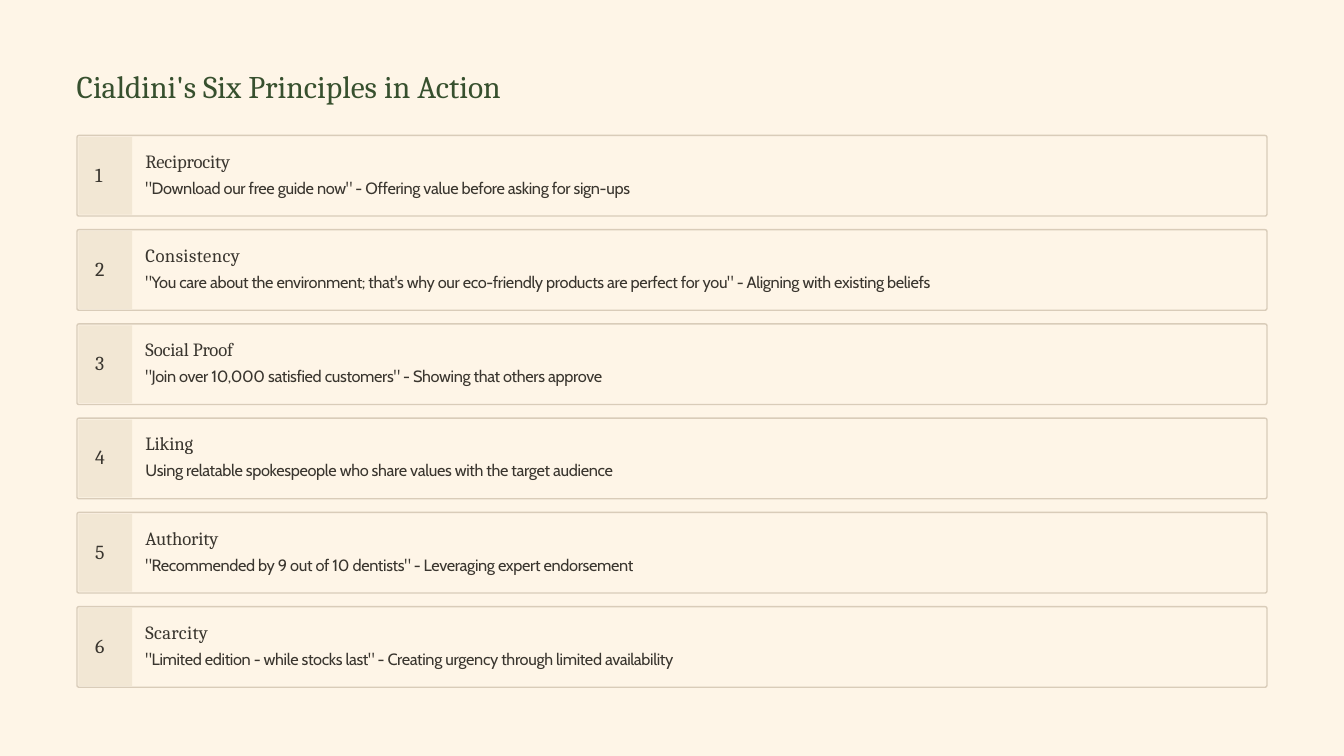
import pptx
import pptx.util
import pptx.dml.color
import pptx.enum.shapes
import pptx.enum.text

Pt = pptx.util.Pt
COLOURS = {"page": "FEF5E7", "title": "37502E", "text": "3A362F",
           "border": "D9CCB9", "tab": "F2E7D4"}
HEADING_FONT, BODY_FONT = "Cambria", "Cabin"
CARD_LEFT, CARD_TOP, CARD_WIDTH, CARD_HEIGHT = 66, 116.1, 1020, 69.1
CARD_PITCH = 80.78
TAB_WIDTH, TAB_INSET = 46, 1.2

# Heading, its letter spacing, and the example below it
PRINCIPLES = [
    ("Reciprocity", -0.1,
     '"Download our free guide now" - Offering value before asking for sign-ups'),
    ("Consistency", 0.4,
     '"You care about the environment; that\'s why our eco-friendly products '
     'are perfect for you" - Aligning with existing beliefs'),
    ("Social Proof", -0.1,
     '"Join over 10,000 satisfied customers" - Showing that others approve'),
    ("Liking", -0.1,
     "Using relatable spokespeople who share values with the target audience"),
    ("Authority", -0.1,
     '"Recommended by 9 out of 10 dentists" - Leveraging expert endorsement'),
    ("Scarcity", 0.3,
     '"Limited edition - while stocks last" - Creating urgency through limited availability'),
]


def colour(name):
    return pptx.dml.color.RGBColor.from_string(COLOURS[name])


class SlideBuilder:
    def __init__(self, deck):
        self.page = deck.slides.add_slide(deck.slide_layouts[5])
        background = self.page.background.fill
        background.solid()
        background.fore_color.rgb = colour("page")

    def frame(self, box, top_inset):
        frame = box.text_frame
        frame.word_wrap = True
        frame.auto_size = pptx.enum.text.MSO_AUTO_SIZE.NONE
        frame.vertical_anchor = pptx.enum.text.MSO_ANCHOR.TOP
        frame.margin_left, frame.margin_top = Pt(0.9), Pt(top_inset)
        frame.margin_right = frame.margin_bottom = Pt(0)
        return frame

    def fill_paragraph(self, para, text, size, font, ink="text", spacing=0, before=1):
        """Set styled text; spacing is between letters, before is above the paragraph."""
        para.text = text
        para.alignment = pptx.enum.text.PP_ALIGN.LEFT
        para.space_before = Pt(before)
        for span in para.runs:
            span.font.size = Pt(size)
            span.font.name = font
            span.font.color.rgb = colour(ink)
            span.font._element.set("spc", str(round(spacing * 100)))

    def title(self, text):
        box = self.page.shapes.title
        box.left, box.top, box.width, box.height = Pt(64.8), Pt(56.9), Pt(420), Pt(34.6)
        frame = self.frame(box, 0.9)
        self.fill_paragraph(frame.paragraphs[0], text, 27, HEADING_FONT, "title")

    def text_box(self, left, top, width, height, top_inset):
        box = self.page.shapes.add_textbox(Pt(left), Pt(top), Pt(width), Pt(height))
        return self.frame(box, top_inset)

    def panel(self, left, top, width, height, fill=None, line=None):
        kinds = pptx.enum.shapes.MSO_SHAPE
        kind = kinds.ROUNDED_RECTANGLE if line else kinds.RECTANGLE
        shape = self.page.shapes.add_shape(kind, Pt(left), Pt(top), Pt(width), Pt(height))
        shape.shadow.inherit = False
        if fill:
            shape.fill.solid()
            shape.fill.fore_color.rgb = colour(fill)
        else:
            shape.fill.background()
        if line:
            shape.adjustments[0] = 0.025
            shape.line.color.rgb = colour(line)
            shape.line.width = Pt(1.2)
        else:
            shape.line.fill.background()

    def principle(self, number, heading, spacing, example):
        top = CARD_TOP + (number - 1) * CARD_PITCH
        self.panel(CARD_LEFT, top, CARD_WIDTH, CARD_HEIGHT, line="border")
        self.panel(CARD_LEFT + TAB_INSET, top + TAB_INSET, TAB_WIDTH,
                   CARD_HEIGHT - 2 * TAB_INSET, fill="tab")
        label = self.text_box(80.6, top + 22.2, 20, 22.3, 0.9)
        self.fill_paragraph(label.paragraphs[0], str(number), 17, HEADING_FONT,
                            spacing=-0.5)
        body = self.text_box(123.8, top + 4.8, 710, 49, 7.2)
        self.fill_paragraph(body.paragraphs[0], heading, 16, HEADING_FONT,
                            spacing=spacing, before=6.9)
        self.fill_paragraph(body.add_paragraph(), example, 14, BODY_FONT,
                            spacing=-0.3, before=5.2)


def main():
    deck = pptx.Presentation()
    deck.slide_width, deck.slide_height = Pt(1152), Pt(648)
    builder = SlideBuilder(deck)
    builder.title("Cialdini's Six Principles in Action")
    for number, principle in enumerate(PRINCIPLES, start=1):
        builder.principle(number, *principle)
    deck.save("out.pptx")


if __name__ == "__main__":
    main()
